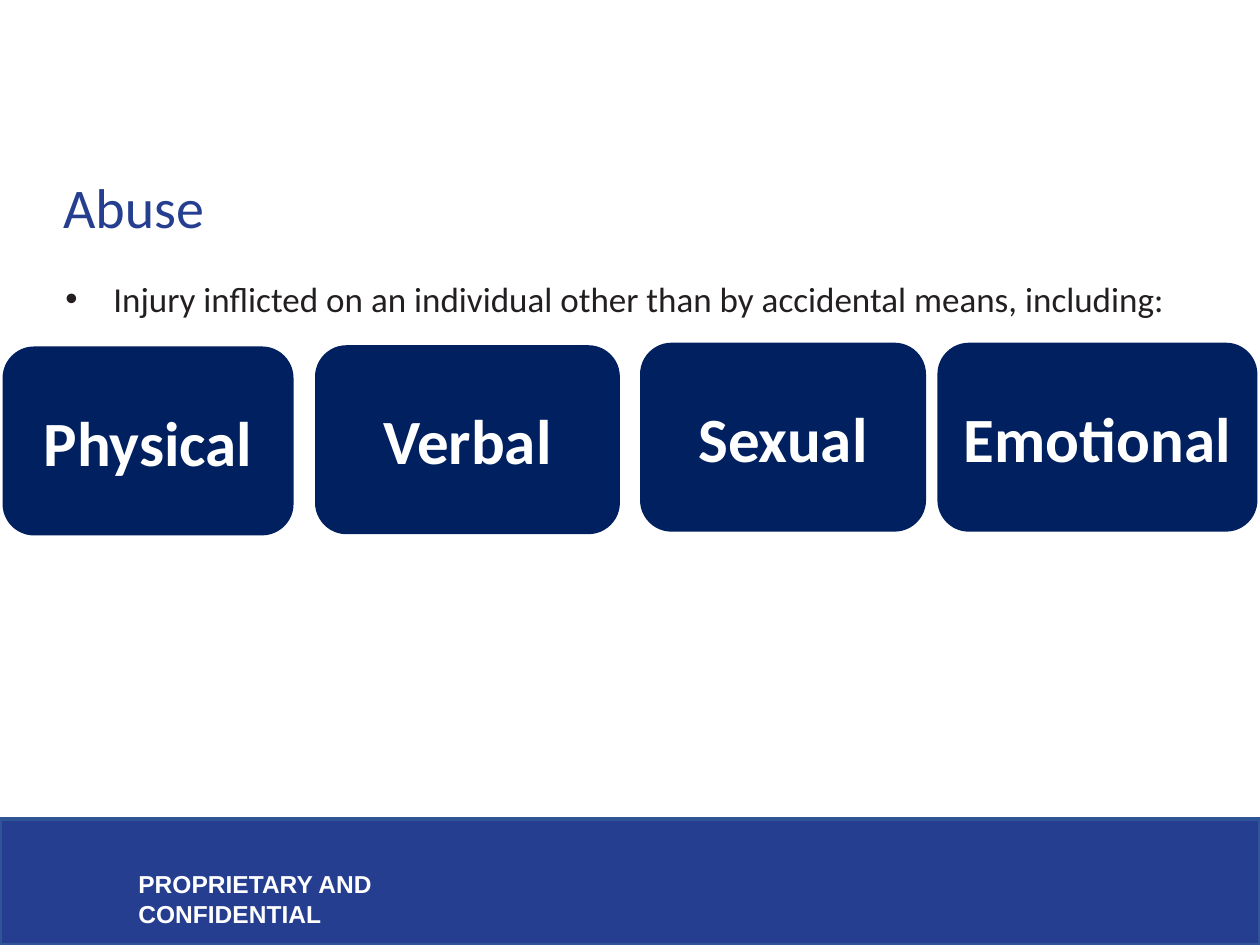
"""Build the slide on the four kinds of abuse."""
from lxml.etree import SubElement
from pptx import Presentation
from pptx.dml.color import RGBColor
from pptx.enum.shapes import MSO_SHAPE
from pptx.enum.text import MSO_ANCHOR, PP_ALIGN
from pptx.oxml.ns import qn
from pptx.util import Inches, Pt

COLORS = {
    "band": "253E90",
    "band_line": "2F5597",
    "card": "002060",
    "body": "231F20",
    "white": "FFFFFF",
}


def write(shape, text, size, color, font="Calibri", bold=False):
    frame = shape.text_frame
    frame.word_wrap = True
    frame.text = text
    para = frame.paragraphs[0]
    span = para.runs[0]
    span.font.name = font
    span.font.size = Pt(size)
    span.font.bold = bold
    span.font.color.rgb = RGBColor.from_string(COLORS[color])
    return para


def add_box(left, top, width, height):
    box = page.shapes.add_textbox(Inches(left), Inches(top), Inches(width), Inches(height))
    frame = box.text_frame
    frame.margin_left = frame.margin_right = frame.margin_top = frame.margin_bottom = 0
    return box


deck = Presentation()
deck.slide_width = Inches(10)
deck.slide_height = Inches(7.5)
page = deck.slides.add_slide(deck.slide_layouts[6])

band = page.shapes.add_shape(
    MSO_SHAPE.RECTANGLE, Inches(0), Inches(6.5), Inches(10), Inches(1)
)
band.shadow.inherit = False
band.fill.solid()
band.fill.fore_color.rgb = RGBColor.from_string(COLORS["band"])
band.line.color.rgb = RGBColor.from_string(COLORS["band_line"])
band.line.width = Pt(2)

footer = page.shapes.add_textbox(Inches(1), Inches(6.85), Inches(3.31), Inches(0.34))
write(footer, "PROPRIETARY AND CONFIDENTIAL", 14, "white", font="Arial", bold=True)

title = add_box(0.5, 1.27, 7.08, 0.63)
title.text_frame.vertical_anchor = MSO_ANCHOR.BOTTOM
write(title, "Abuse", 32, "band").line_spacing = Pt(31)

body = add_box(0.5, 2.17, 9, 4.03)
definition = write(
    body,
    "Injury inflicted on an individual other than by accidental means, including:",
    20,
    "body",
)
definition.line_spacing = 1.1
definition.space_after = Pt(2)
properties = definition._p.get_or_add_pPr()
properties.set("marL", str(Inches(0.4)))
properties.set("indent", str(Inches(-0.38)))
SubElement(properties, qn("a:buFont")).set("typeface", "Arial")
SubElement(properties, qn("a:buChar")).set("char", "•")

cards = [
    ("Physical", 0.02, 2.75, 2.31),
    ("Verbal", 2.5, 2.74, 2.42),
    ("Sexual", 5.08, 2.72, 2.27),
    ("Emotional", 7.44, 2.72, 2.54),
]
for label, left, top, width in cards:
    card = page.shapes.add_shape(
        MSO_SHAPE.ROUNDED_RECTANGLE, Inches(left), Inches(top), Inches(width), Inches(1.5)
    )
    card.shadow.inherit = False
    card.fill.solid()
    card.fill.fore_color.rgb = RGBColor.from_string(COLORS["card"])
    card.line.fill.background()
    card.text_frame.vertical_anchor = MSO_ANCHOR.MIDDLE
    write(card, label, 36, "white", bold=True).alignment = PP_ALIGN.CENTER

deck.save("out.pptx")
